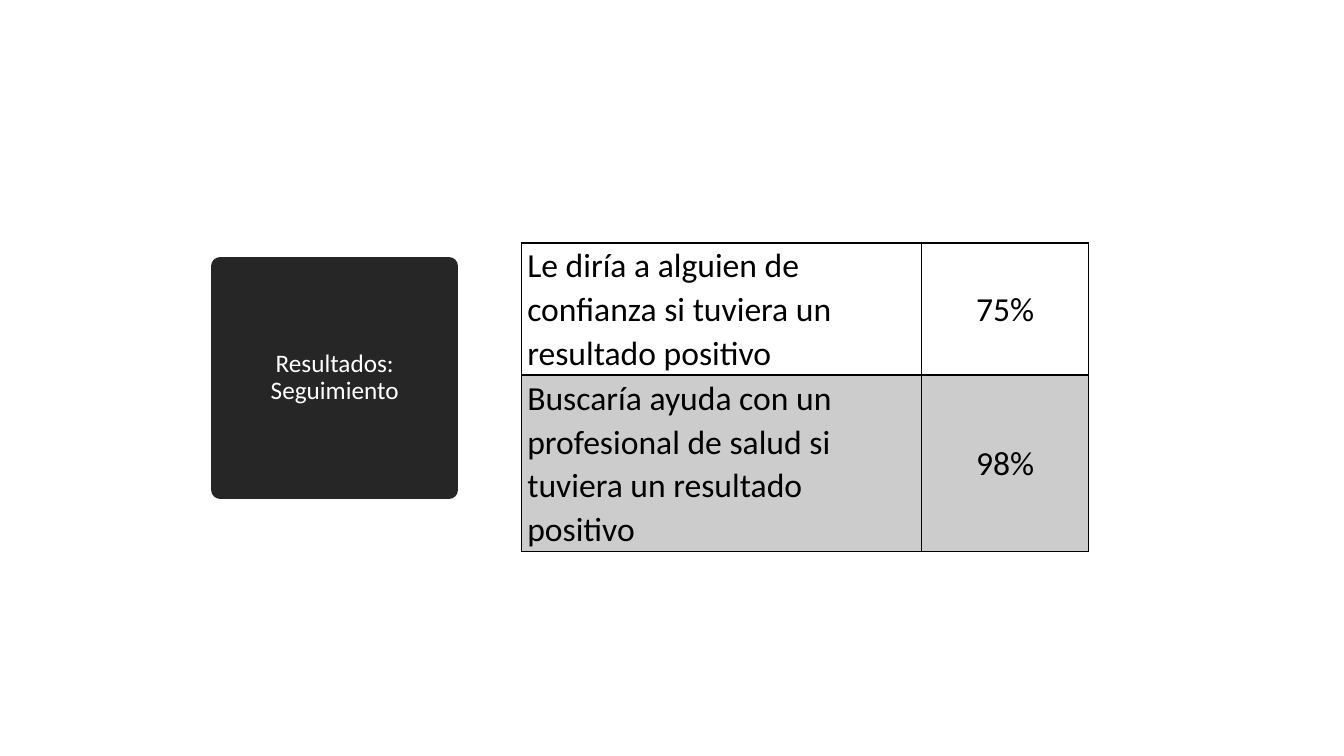
from dataclasses import dataclass

from lxml import etree
from pptx import Presentation
from pptx.dml.color import RGBColor
from pptx.enum.shapes import MSO_SHAPE
from pptx.enum.text import MSO_ANCHOR, PP_ALIGN
from pptx.oxml.ns import qn
from pptx.util import Inches, Pt

RECTANGLE = MSO_SHAPE.RECTANGLE
MIDDLE = MSO_ANCHOR.MIDDLE
LEFT, CENTER = PP_ALIGN.LEFT, PP_ALIGN.CENTER
BORDER_TAGS = ("a:lnL", "a:lnR", "a:lnT", "a:lnB")


@dataclass(frozen=True)
class Theme:
    """Colours, font and sizes of the slide."""
    font: str = "Calibri"
    dark: str = "262626"
    light: str = "FFFFFF"
    ink: str = "000000"
    band_opacity: int = 20
    title_size: float = 18
    table_size: float = 24
    title_outline: float = 13.75
    border: float = 1


class SlideBuilder:
    """Draws styled elements on one slide."""

    def __init__(self, slide, theme):
        self.slide = slide
        self.theme = theme

    def set_text(self, frame, text, size, color, align, spacing):
        """Put one formatted paragraph into a text frame."""
        frame.text = text
        frame.word_wrap = True
        paragraph = frame.paragraphs[0]
        paragraph.alignment = align
        paragraph.line_spacing = spacing
        font = paragraph.runs[0].font
        font.name = self.theme.font
        font.size = Pt(size)
        font.color.rgb = RGBColor.from_string(color)

    def title_block(self, text, left, top, width, height):
        """Add the dark title block with its thick round-cornered outline."""
        theme = self.theme
        block = self.slide.shapes.add_shape(
            RECTANGLE, Inches(left), Inches(top), Inches(width), Inches(height))
        block.shadow.inherit = False
        block.fill.solid()
        block.fill.fore_color.rgb = RGBColor.from_string(theme.dark)
        block.line.color.rgb = RGBColor.from_string(theme.dark)
        block.line.width = Pt(theme.title_outline)
        etree.SubElement(block._element.spPr.find(qn("a:ln")), qn("a:round"))
        frame = block.text_frame
        frame.vertical_anchor = MIDDLE
        frame.margin_left = frame.margin_right = Inches(0.07)
        frame.margin_top = frame.margin_bottom = Inches(0.04)
        self.set_text(frame, text, theme.title_size, theme.light, CENTER, 0.9)

    def cell_borders(self, cell):
        """Outline all four sides of a cell."""
        properties = cell._tc.get_or_add_tcPr()
        for tag in BORDER_TAGS:
            line = etree.SubElement(properties, qn(tag), w=str(Pt(self.theme.border)))
            fill = etree.SubElement(line, qn("a:solidFill"))
            etree.SubElement(fill, qn("a:srgbClr"), val=self.theme.ink)

    def cell_fill(self, cell, shaded):
        """Shade a cell with translucent ink or leave it clear."""
        if not shaded:
            cell.fill.background()
            return
        cell.fill.solid()
        cell.fill.fore_color.rgb = RGBColor.from_string(self.theme.ink)
        ink = cell._tc.tcPr.find(qn("a:solidFill")).find(qn("a:srgbClr"))
        etree.SubElement(ink, qn("a:alpha"), val=str(self.theme.band_opacity * 1000))

    def results_table(self, results, left, top, widths, heights):
        """Add the table of answers, shading every second row."""
        theme = self.theme
        table = self.slide.shapes.add_table(
            len(heights), len(widths), Inches(left), Inches(top),
            Inches(sum(widths)), Inches(sum(heights))).table
        table.first_row = table.horz_banding = False
        for column, width in zip(table.columns, widths):
            column.width = Inches(width)
        for row_index, (answers, height) in enumerate(zip(results, heights)):
            table.rows[row_index].height = Inches(height)
            for column_index, (text, align) in enumerate(zip(answers, (LEFT, CENTER))):
                cell = table.cell(row_index, column_index)
                cell.vertical_anchor = MIDDLE
                cell.margin_left = cell.margin_right = Inches(0.06)
                cell.margin_top = cell.margin_bottom = 0
                self.set_text(cell.text_frame, text, theme.table_size, theme.ink, align, 1.07)
                self.cell_borders(cell)
                self.cell_fill(cell, row_index % 2 == 1)


def main():
    """Build and save the slide."""
    presentation = Presentation()
    presentation.slide_width = Inches(13.33)
    presentation.slide_height = Inches(7.5)
    slide = presentation.slides.add_slide(presentation.slide_layouts[6])
    builder = SlideBuilder(slide, Theme())
    builder.title_block("Resultados: Seguimiento", 2.19, 2.64, 2.26, 2.22)
    results = [
        ("Le diría a alguien de confianza si tuviera un resultado positivo", "75%"),
        ("Buscaría ayuda con un profesional de salud si tuviera un resultado positivo", "98%"),
    ]
    builder.results_table(results, 5.17, 2.41, (3.97, 1.66), (1.31, 1.75))
    presentation.save("out.pptx")


if __name__ == "__main__":
    main()
